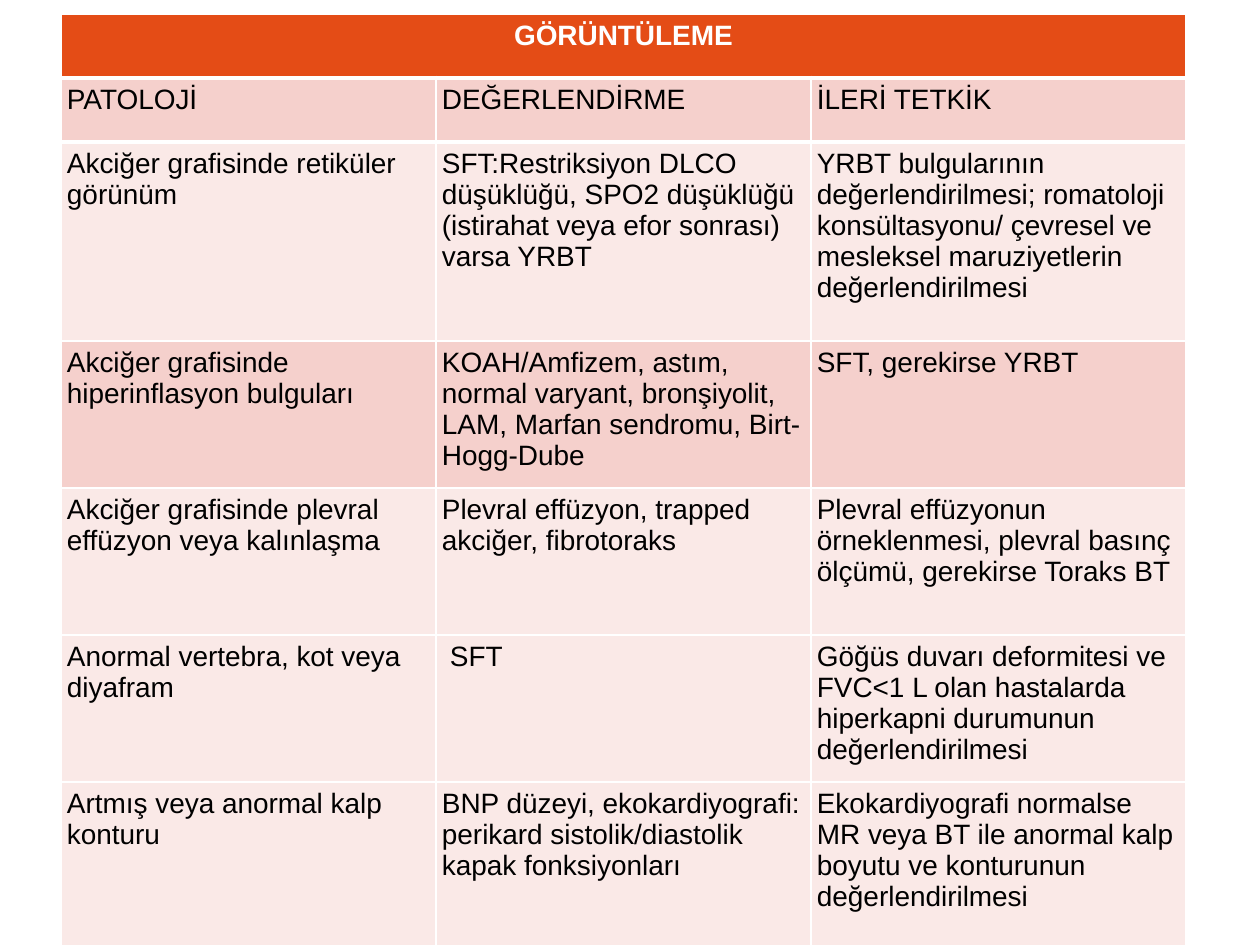
from lxml import etree
from pptx import Presentation
from pptx.dml.color import RGBColor
from pptx.enum.text import PP_ALIGN
from pptx.oxml.ns import qn
from pptx.util import Pt

PX = 914400 // 126
CENTER = PP_ALIGN.CENTER
LEFT = PP_ALIGN.LEFT

WHITE = RGBColor(0xFF, 0xFF, 0xFF)
BLACK = RGBColor(0x00, 0x00, 0x00)
ORANGE = RGBColor(0xE4, 0x4C, 0x16)
ROSE = RGBColor(0xF5, 0xD0, 0xCC)
PALE = RGBColor(0xFA, 0xE9, 0xE7)

TITLE = "GÖRÜNTÜLEME"
ROWS = [
    (64, ROSE, ("PATOLOJİ", "DEĞERLENDİRME", "İLERİ TETKİK")),
    (199, PALE, (
        "Akciğer grafisinde retiküler görünüm",
        "SFT:Restriksiyon DLCO düşüklüğü, SPO2 düşüklüğü (istirahat veya efor sonrası) varsa YRBT",
        "YRBT bulgularının değerlendirilmesi; romatoloji konsültasyonu/ çevresel ve mesleksel "
        "maruziyetlerin değerlendirilmesi")),
    (147, ROSE, (
        "Akciğer grafisinde hiperinflasyon bulguları",
        "KOAH/Amfizem, astım, normal varyant, bronşiyolit, LAM, Marfan sendromu, Birt-Hogg-Dube",
        "SFT, gerekirse YRBT")),
    (147, PALE, (
        "Akciğer grafisinde plevral effüzyon veya kalınlaşma",
        "Plevral effüzyon, trapped akciğer, fibrotoraks",
        "Plevral effüzyonun örneklenmesi, plevral basınç ölçümü, gerekirse Toraks BT")),
    (147, PALE, (
        "Anormal vertebra, kot veya diyafram",
        "SFT",
        "Göğüs duvarı deformitesi ve FVC<1 L olan hastalarda hiperkapni durumunun "
        "değerlendirilmesi")),
    (199, PALE, (
        "Artmış veya anormal kalp konturu",
        "BNP düzeyi, ekokardiyografi: perikard sistolik/diastolik kapak fonksiyonları",
        "Ekokardiyografi normalse MR veya BT ile anormal kalp boyutu ve konturunun "
        "değerlendirilmesi")),
]
TITLE_HEIGHT = 64
COLUMN_WIDTH = 375
INDENTED_CELL = (5, 1)
THICK_EDGES = {1, 2}


class SlideBuilder:
    font_name = "Arial"
    font_size = Pt(16)
    margin = 6

    def __init__(self, deck):
        self.slide = deck.slides.add_slide(deck.slide_layouts[6])

    def table(self, left, top, column_widths, row_heights):
        frame = self.slide.shapes.add_table(
            len(row_heights), len(column_widths), left * PX, top * PX,
            sum(column_widths) * PX, sum(row_heights) * PX)
        table = frame.table
        table.first_row = False
        table.horz_banding = False
        for column, width in zip(table.columns, column_widths):
            column.width = width * PX
        for row, height in zip(table.rows, row_heights):
            row.height = height * PX
        return table

    def borders(self, cell, top, bottom):
        properties = cell._tc.get_or_add_tcPr()
        for side, width in (("L", 1), ("R", 1), ("T", top), ("B", bottom)):
            line = etree.SubElement(properties, qn(f"a:ln{side}"), w=str(Pt(width)))
            fill = etree.SubElement(line, qn("a:solidFill"))
            etree.SubElement(fill, qn("a:srgbClr"), val=str(WHITE))

    def cell(self, cell, text, fill, color=BLACK, bold=False, align=LEFT, indent=0):
        cell.fill.solid()
        cell.fill.fore_color.rgb = fill
        cell.margin_left = (self.margin + indent) * PX
        cell.margin_right = cell.margin_top = cell.margin_bottom = self.margin * PX
        cell.text = text
        para = cell.text_frame.paragraphs[0]
        para.alignment = align
        para.font.name = self.font_name
        para.font.size = self.font_size
        para.font.bold = bold
        para.font.color.rgb = color


def main():
    deck = Presentation()
    deck.slide_width = 1260 * PX
    deck.slide_height = 945 * PX
    builder = SlideBuilder(deck)

    heights = [TITLE_HEIGHT] + [height for height, _, _ in ROWS]
    table = builder.table(61, 14, [COLUMN_WIDTH] * 3, heights)
    for row in range(len(heights)):
        top, bottom = (3 if edge in THICK_EDGES else 1 for edge in (row, row + 1))
        for column in range(3):
            builder.borders(table.cell(row, column), top, bottom)

    table.cell(0, 0).merge(table.cell(0, 2))
    builder.cell(table.cell(0, 0), TITLE, ORANGE, WHITE, True, CENTER)
    for row, (_, fill, texts) in enumerate(ROWS, 1):
        for column, text in enumerate(texts):
            indent = 8 if (row, column) == INDENTED_CELL else 0
            builder.cell(table.cell(row, column), text, fill, indent=indent)

    deck.save("out.pptx")


if __name__ == "__main__":
    main()
